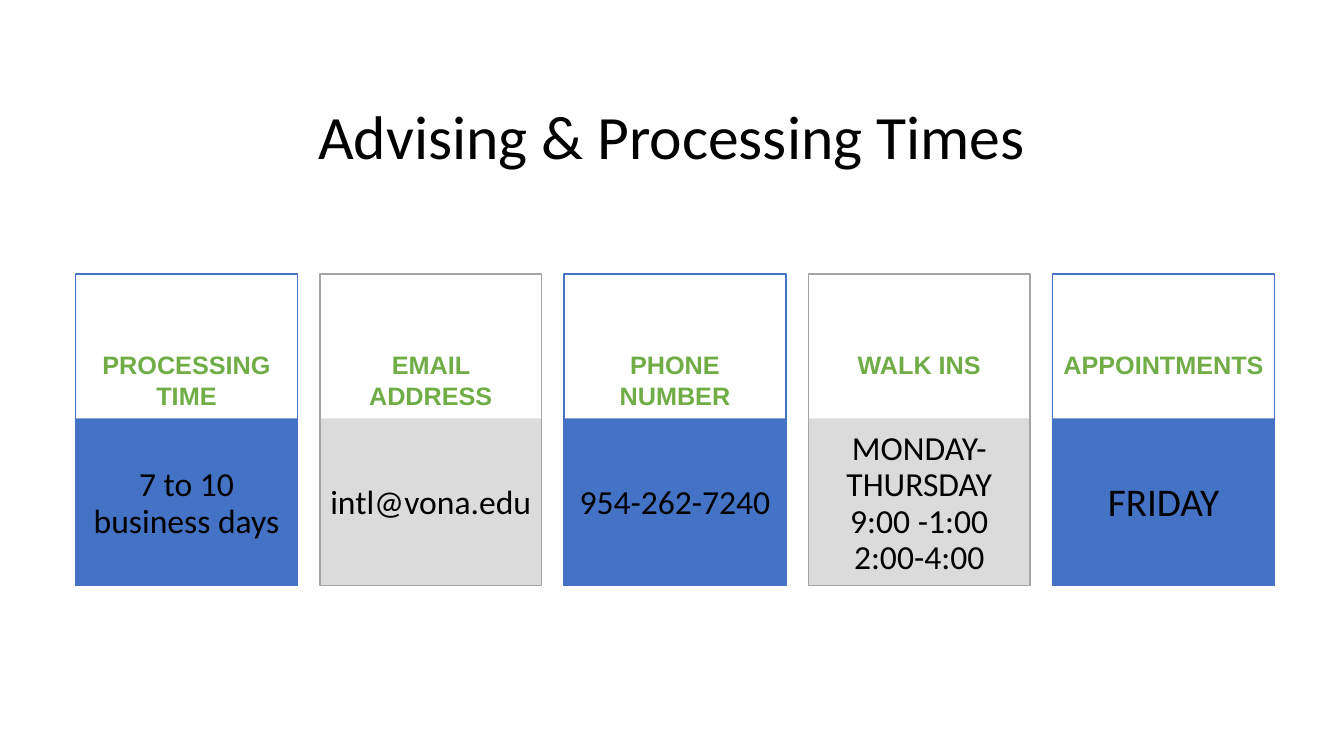
import pptx
import pptx.util
import pptx.dml.color
import pptx.enum.shapes
import pptx.enum.text

Inches = pptx.util.Inches
RGBColor = pptx.dml.color.RGBColor
Anchor = pptx.enum.text.MSO_ANCHOR
RECTANGLE = pptx.enum.shapes.MSO_SHAPE.RECTANGLE

COLORS = {
    "blue": "4472C4",
    "light_gray": "DBDBDB",
    "gray": "A5A5A5",
    "green": "70AD47",
    "black": "000000",
}


def write_text(shape, text, size, font="Calibri", color="black", bold=False,
               anchor=Anchor.MIDDLE, spacing=1.0, side=0.1, top=0.05):
    frame = shape.text_frame
    frame.word_wrap = True
    frame.auto_size = pptx.enum.text.MSO_AUTO_SIZE.NONE
    frame.vertical_anchor = anchor
    frame.margin_left = frame.margin_right = Inches(side)
    frame.margin_top = Inches(top)
    frame.margin_bottom = Inches(0.05)
    frame.text = text
    for paragraph in frame.paragraphs:
        paragraph.alignment = pptx.enum.text.PP_ALIGN.CENTER
        paragraph.line_spacing = spacing
        paragraph.space_before = paragraph.space_after = pptx.util.Pt(0)
        for run in paragraph.runs:
            run.font.name = font
            run.font.size = pptx.util.Pt(size)
            run.font.bold = bold
            run.font.color.rgb = RGBColor.from_string(COLORS[color])


presentation = pptx.Presentation()
presentation.slide_width = Inches(13.33)
presentation.slide_height = Inches(7.5)
slide = presentation.slides.add_slide(presentation.slide_layouts[5])

title = slide.shapes.title
title.left, title.top = Inches(0.83), Inches(0.92)
title.width, title.height = Inches(11.67), Inches(0.84)
write_text(title, "Advising & Processing Times", size=44)

cards = [
    ("PROCESSING TIME", "7 to 10 business days", 24),
    ("EMAIL ADDRESS", "intl@vona.edu", 24),
    ("PHONE NUMBER", "954-262-7240", 24),
    ("WALK INS", "MONDAY-THURSDAY\n9:00 -1:00\n2:00-4:00", 24),
    ("APPOINTMENTS", "FRIDAY", 28),
]
card_width = 2.2
first_left, last_left = 0.75, 10.44
card_pitch = (last_left - first_left) / (len(cards) - 1)
card_styles = [("blue", "blue"), ("light_gray", "gray")]

for index, (heading, details, details_size) in enumerate(cards):
    left = first_left + index * card_pitch
    fill_color, line_color = card_styles[index % 2]

    panel = slide.shapes.add_shape(
        RECTANGLE, Inches(left), Inches(4.15), Inches(card_width), Inches(1.66))
    panel.shadow.inherit = False
    panel.fill.solid()
    panel.fill.fore_color.rgb = RGBColor.from_string(COLORS[fill_color])
    panel.line.fill.background()

    card = slide.shapes.add_shape(
        RECTANGLE, Inches(left), Inches(2.72), Inches(card_width), Inches(3.09))
    card.shadow.inherit = False
    card.fill.background()
    card.line.color.rgb = RGBColor.from_string(COLORS[line_color])
    card.line.width = pptx.util.Pt(1)
    write_text(card, heading, size=18, font="Arial", color="green", bold=True,
               anchor=Anchor.TOP, side=0.08, top=0.75)

    details_box = slide.shapes.add_textbox(
        Inches(left + 0.05), Inches(4.25), Inches(card_width - 0.1), Inches(1.5))
    write_text(details_box, details, size=details_size, spacing=0.9, side=0.02)

presentation.save("out.pptx")
